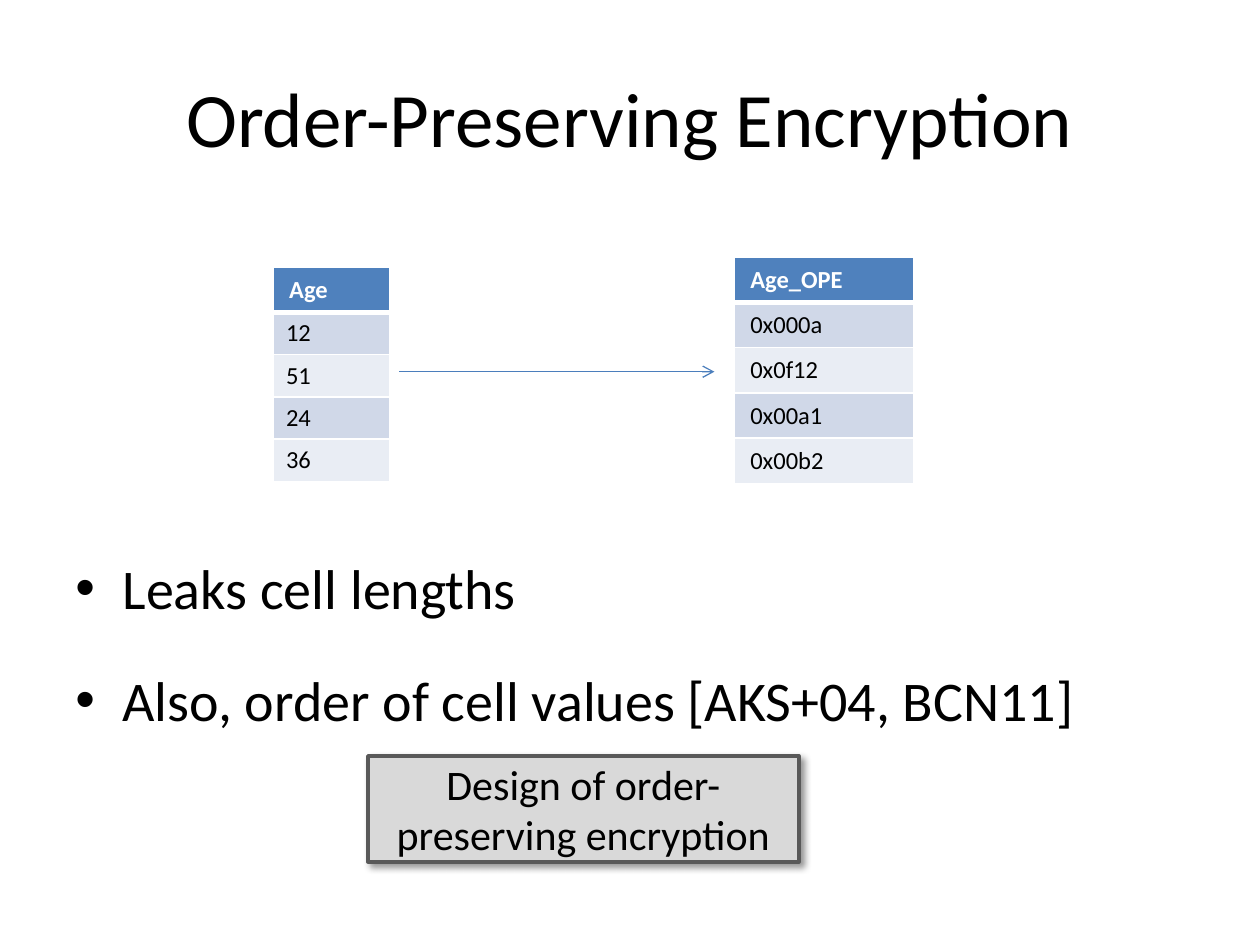
from dataclasses import dataclass
from typing import Any

import lxml.etree
import pptx
import pptx.dml.color
import pptx.enum.shapes
import pptx.enum.text
import pptx.oxml
import pptx.oxml.ns
import pptx.util

Pt = pptx.util.Pt
RGBColor = pptx.dml.color.RGBColor
Align = pptx.enum.text.PP_ALIGN
Anchor = pptx.enum.text.MSO_ANCHOR
qn = pptx.oxml.ns.qn

BLACK = RGBColor(0x00, 0x00, 0x00)
WHITE = RGBColor(0xFF, 0xFF, 0xFF)
HEADER_BLUE = RGBColor(0x4F, 0x81, 0xBD)
BANDS = (RGBColor(0xD0, 0xD8, 0xE8), RGBColor(0xE9, 0xED, 0xF4))
ARROW_BLUE = RGBColor(0x4B, 0x7E, 0xBC)
BOX_GRAY = RGBColor(0xD9, 0xD9, 0xD9)
BOX_EDGE = RGBColor(0x59, 0x59, 0x59)
FONT = "Calibri"
BULLET_INDENT = 27


@dataclass
class Column:
    """A one-column table: its header and values, with inner margins in points."""
    left: float
    top: float
    width: float
    row_height: float
    side_margin: float
    end_margin: float
    header: str
    values: tuple[str, ...]


COLUMNS = (
    Column(156.24, 152.64, 66.24, 24.2, 7.2, 3.6, "Age", ("12", "51", "24", "36")),
    Column(419.76, 146.88, 102.24, 25.9, 9, 4.5, "Age_OPE",
           ("0x000a", "0x0f12", "0x00a1", "0x00b2")),
)
HEADER_MARGINS = (9, 4.5)
BULLETS = ("Leaks cell lengths", "Also, order of cell values [AKS+04, BCN11]")


def format_text(paragraph: Any, size: float, color: RGBColor, bold: bool = False) -> None:
    for run in paragraph.runs:
        run.font.name = FONT
        run.font.size = Pt(size)
        run.font.bold = bold
        run.font.color.rgb = color


def add_text_box(slide: Any, left: float, top: float, width: float, height: float) -> Any:
    text_frame = slide.shapes.add_textbox(Pt(left), Pt(top), Pt(width), Pt(height)).text_frame
    text_frame.word_wrap = True
    return text_frame


def add_title(slide: Any) -> None:
    text_frame = add_text_box(slide, 36, 21.6, 648, 90)
    text_frame.vertical_anchor = Anchor.MIDDLE
    text_frame.text = "Order-Preserving Encryption"
    paragraph = text_frame.paragraphs[0]
    paragraph.alignment = Align.CENTER
    format_text(paragraph, 44, BLACK)


def set_borders(cell: Any, bottom_width: float) -> None:
    """Draw white borders: 1 pt, with the given width at the bottom."""
    properties = cell._tc.get_or_add_tcPr()
    for side, width in (("L", 1), ("R", 1), ("T", 1), ("B", bottom_width)):
        line = lxml.etree.SubElement(properties, qn(f"a:ln{side}"), w=str(Pt(width)))
        fill = lxml.etree.SubElement(line, qn("a:solidFill"))
        lxml.etree.SubElement(fill, qn("a:srgbClr"), val=str(WHITE))


def add_column(slide: Any, column: Column) -> None:
    texts = (column.header, *column.values)
    table = slide.shapes.add_table(
        len(texts), 1, Pt(column.left), Pt(column.top),
        Pt(column.width), Pt(column.row_height * len(texts))).table
    for index, text in enumerate(texts):
        is_header = index == 0
        side, end = HEADER_MARGINS if is_header else (column.side_margin, column.end_margin)
        table.rows[index].height = Pt(column.row_height)
        cell = table.cell(index, 0)
        cell.margin_left = cell.margin_right = Pt(side)
        cell.margin_top = cell.margin_bottom = Pt(end)
        set_borders(cell, 3 if is_header else 1)
        cell.fill.solid()
        cell.fill.fore_color.rgb = HEADER_BLUE if is_header else BANDS[(index - 1) % 2]
        cell.text_frame.text = text
        format_text(cell.text_frame.paragraphs[0], 14, WHITE if is_header else BLACK, is_header)


def add_arrow(slide: Any) -> None:
    arrow = slide.shapes.add_connector(
        pptx.enum.shapes.MSO_CONNECTOR.STRAIGHT, Pt(228.24), Pt(212.4), Pt(408.24), Pt(212.4))
    arrow.line.color.rgb = ARROW_BLUE
    arrow.line.width = Pt(0.75)
    lxml.etree.SubElement(arrow.line._get_or_add_ln(), qn("a:tailEnd"), type="arrow")
    lxml.etree.SubElement(arrow._element.spPr, qn("a:effectLst"))


def add_bullets(slide: Any) -> None:
    text_frame = add_text_box(slide, 36, 293.76, 648, 188.64)
    text_frame.text = "\n".join(BULLETS)
    for paragraph in text_frame.paragraphs:
        paragraph.line_spacing = 1.5
        paragraph.space_before = Pt(6.4)
        format_text(paragraph, 32, BLACK)
        properties = paragraph._p.get_or_add_pPr()
        properties.set("marL", str(Pt(BULLET_INDENT)))
        properties.set("indent", str(-Pt(BULLET_INDENT)))
        lxml.etree.SubElement(properties, qn("a:buFont"), typeface="Arial")
        lxml.etree.SubElement(properties, qn("a:buChar"), char="•")


def add_shadow(shape: Any) -> None:
    """Cast a soft black shadow down and to the right."""
    shape.shadow.inherit = False
    effects = shape._element.spPr.find(qn("a:effectLst"))
    shadow = lxml.etree.SubElement(
        effects, qn("a:outerShdw"), blurRad=str(Pt(4)), dist=str(Pt(3)),
        dir=str(45 * 60000), algn="tl", rotWithShape="0")
    color = lxml.etree.SubElement(shadow, qn("a:srgbClr"), val=str(BLACK))
    lxml.etree.SubElement(color, qn("a:alpha"), val="40000")


def add_design_box(slide: Any) -> None:
    box = slide.shapes.add_shape(
        pptx.enum.shapes.MSO_SHAPE.RECTANGLE, Pt(210.24), Pt(432), Pt(246.24), Pt(60.48))
    box.fill.solid()
    box.fill.fore_color.rgb = BOX_GRAY
    box.line.color.rgb = BOX_EDGE
    box.line.width = Pt(2)
    add_shadow(box)
    box.text_frame.word_wrap = True
    box.text_frame.vertical_anchor = Anchor.MIDDLE
    box.text_frame.text = "Design of order-preserving encryption"
    paragraph = box.text_frame.paragraphs[0]
    paragraph.alignment = Align.CENTER
    format_text(paragraph, 24, BLACK)


def main() -> None:
    presentation = pptx.Presentation()
    presentation.slide_width = Pt(720)
    presentation.slide_height = Pt(540)
    slide = presentation.slides.add_slide(presentation.slide_layouts[6])
    add_title(slide)
    for column in COLUMNS:
        add_column(slide, column)
    add_arrow(slide)
    add_bullets(slide)
    add_design_box(slide)
    presentation.save("out.pptx")


if __name__ == "__main__":
    main()
